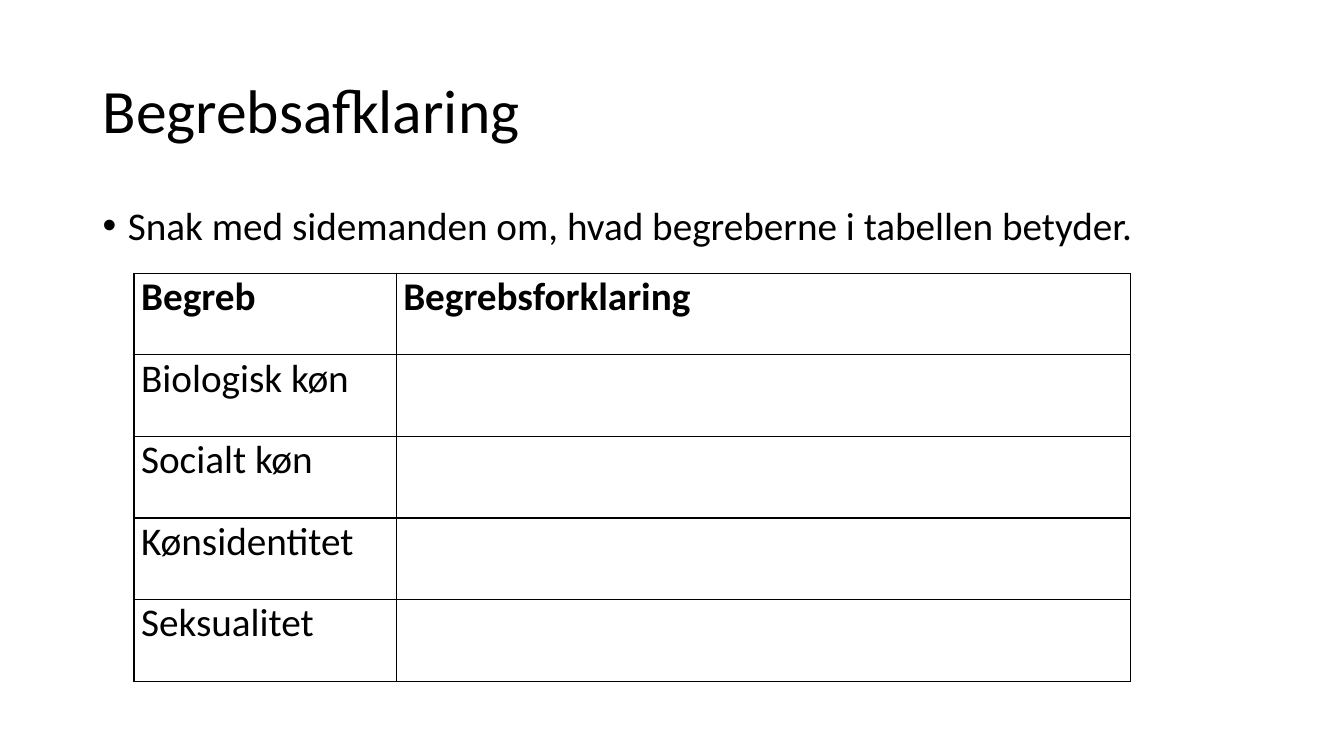
from lxml import etree
from pptx import Presentation
from pptx.dml.color import RGBColor
from pptx.enum.text import MSO_ANCHOR
from pptx.oxml.ns import qn
from pptx.util import Inches, Pt

TERMS = ["Biologisk køn", "Socialt køn", "Kønsidentitet", "Seksualitet"]


def color(code):
    return RGBColor.from_string(code)


class Page:
    face = "Calibri"
    ink = "000000"

    def __init__(self, deck):
        self.slide = deck.slides.add_slide(deck.slide_layouts[6])

    def style(self, para, size, bold=False):
        font = para.font
        font.name = self.face
        font.size = Pt(size)
        font.bold = bold
        font.color.rgb = color(self.ink)

    def text(self, words, left, top, width, height, size,
             anchor=MSO_ANCHOR.TOP, bullet=False):
        box = self.slide.shapes.add_textbox(
            Inches(left), Inches(top), Inches(width), Inches(height))
        frame = box.text_frame
        frame.word_wrap = True
        frame.vertical_anchor = anchor
        para = frame.paragraphs[0]
        para.text = words
        para.line_spacing = 0.9
        if bullet:
            self.bullet(para)
        self.style(para, size)

    def bullet(self, para):
        props = para._p.get_or_add_pPr()
        props.set("marL", str(Inches(0.25)))
        props.set("indent", str(Inches(-0.25)))
        etree.SubElement(props, qn("a:buFont"), typeface="Arial")
        etree.SubElement(props, qn("a:buChar"), char="•")

    def border(self, cell):
        props = cell._tc.get_or_add_tcPr()
        for side in ("lnL", "lnR", "lnT", "lnB"):
            line = etree.SubElement(props, qn(f"a:{side}"), w=str(Pt(1)))
            fill = etree.SubElement(line, qn("a:solidFill"))
            etree.SubElement(fill, qn("a:srgbClr"), val=self.ink)

    def table(self, rows, left, top, widths, height, size):
        """Draw a ruled table with a bold first row; height is per row."""
        grid = self.slide.shapes.add_table(
            len(rows), len(widths), Inches(left), Inches(top),
            Inches(sum(widths)), Inches(height * len(rows))).table
        grid.horz_banding = False
        for col, width in zip(grid.columns, widths):
            col.width = Inches(width)
        for r, row in enumerate(rows):
            grid.rows[r].height = Inches(height)
            for c, words in enumerate(row):
                cell = grid.cell(r, c)
                cell.margin_left = cell.margin_right = Inches(0.07)
                cell.margin_top = cell.margin_bottom = 0
                self.border(cell)
                cell.fill.background()
                para = cell.text_frame.paragraphs[0]
                if words:
                    para.text = words
                self.style(para, size, bold=r == 0)


def main():
    deck = Presentation()
    deck.slide_width = Inches(13.33)
    deck.slide_height = Inches(7.5)
    page = Page(deck)
    page.text("Begrebsafklaring", 0.92, 0.4, 11.5, 1.45, 44,
              anchor=MSO_ANCHOR.MIDDLE)
    page.text("Snak med sidemanden om, hvad begreberne i tabellen betyder.",
              0.92, 2, 11.5, 4.76, 28, bullet=True)
    rows = [("Begreb", "Begrebsforklaring")] + [(term, "") for term in TERMS]
    page.table(rows, 1.33, 2.71, (2.6, 7.28), 0.81, 28)
    deck.save("out.pptx")


if __name__ == "__main__":
    main()
